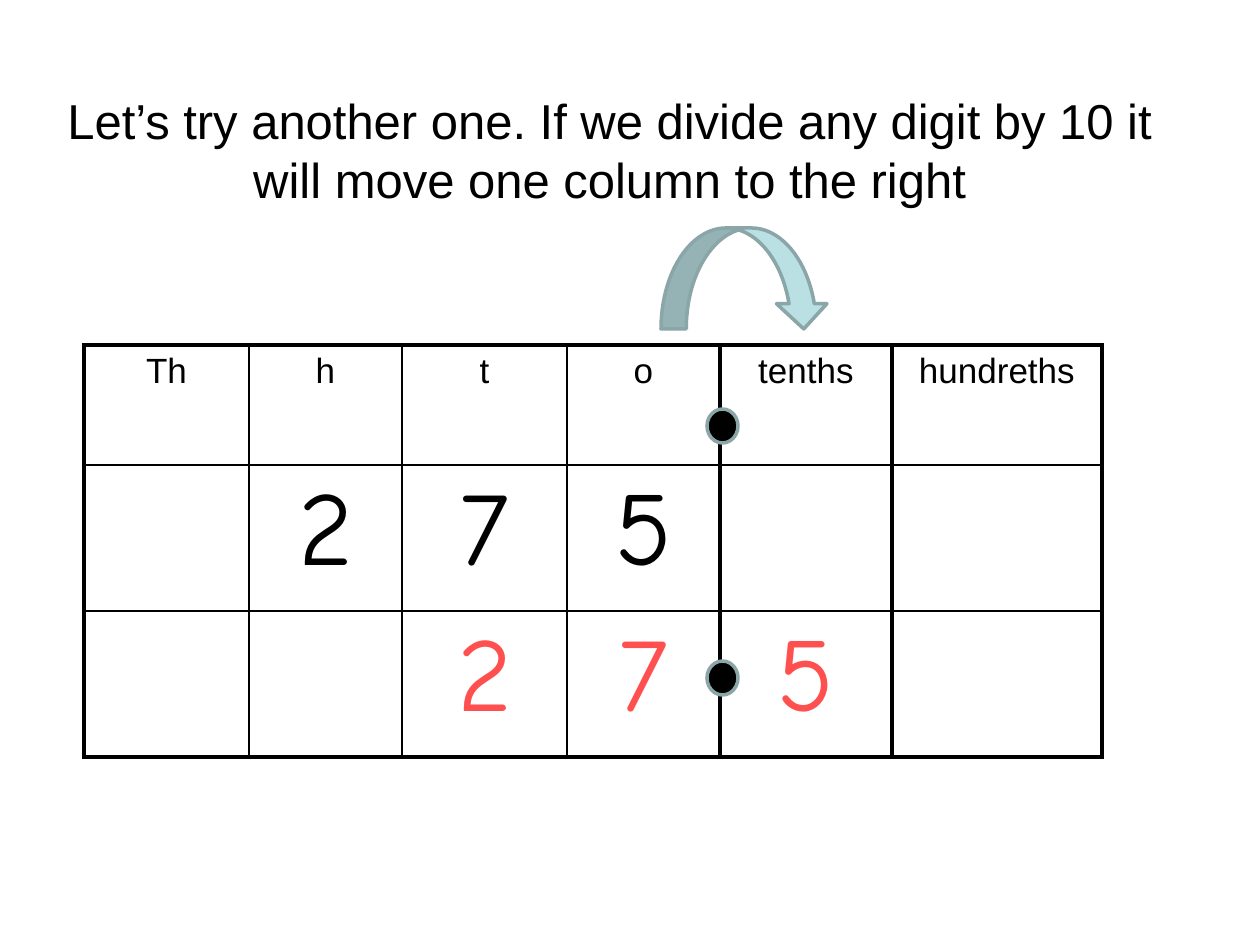
"""Build a place value slide showing division by ten."""
import lxml.etree
import pptx
import pptx.dml.color
import pptx.enum.shapes
import pptx.enum.text
import pptx.oxml.ns
import pptx.util

RGBColor = pptx.dml.color.RGBColor
MSO_SHAPE = pptx.enum.shapes.MSO_SHAPE
CENTER = pptx.enum.text.PP_ALIGN.CENTER

BLACK = RGBColor(0x00, 0x00, 0x00)
RED = RGBColor(0xFF, 0x50, 0x50)
TEAL = RGBColor(0xBB, 0xE0, 0xE3)
GREY_TEAL = RGBColor(0x8A, 0xA6, 0xA8)

TITLE = "Let’s try another one. If we divide any digit by 10 it will move one column to the right"
TITLE_BOX = (53, 84, 1113, 131)
ROWS = [
    (["Th", "h", "t", "o", "tenths", "hundreths"], 120, "Arial", 20, BLACK),
    (["", "2", "7", "5", "", ""], 146, "Comic Neue", 60, BLACK),
    (["", "", "2", "7", "5", ""], 146, "Comic Neue", 60, RED),
]
COLUMN_WIDTHS = [165, 153, 165, 153, 172, 210]
TABLE_LEFT, TABLE_TOP = 84, 345
THICK_COLUMN_EDGES = {0, 4, 5, 6}
THICK_ROW_EDGES = {0, len(ROWS)}
THICK, THIN = 2.25, 1
SHAPES = [
    (MSO_SHAPE.OVAL, (707, 409, 31, 34), BLACK),
    (MSO_SHAPE.CURVED_DOWN_ARROW, (661, 228, 168, 101), TEAL),
    (MSO_SHAPE.OVAL, (707, 661, 31, 34), BLACK),
]


def px(length):
    return pptx.util.Emu(round(length * 914400 / 126))


def write(text_frame, text, font_name, size, color, space_before):
    text_frame.text = text
    paragraph = text_frame.paragraphs[0]
    paragraph.alignment = CENTER
    paragraph.space_before = pptx.util.Pt(space_before)
    for run in paragraph.runs:
        run.font.name = font_name
        run.font.size = pptx.util.Pt(size)
        run.font.color.rgb = color


def add_borders(cell, row, column):
    properties = cell._tc.get_or_add_tcPr()
    edges = [
        ("a:lnL", column in THICK_COLUMN_EDGES),
        ("a:lnR", column + 1 in THICK_COLUMN_EDGES),
        ("a:lnT", row in THICK_ROW_EDGES),
        ("a:lnB", row + 1 in THICK_ROW_EDGES),
    ]
    for position, (tag, is_thick) in enumerate(edges):
        line = lxml.etree.Element(pptx.oxml.ns.qn(tag))
        line.set("w", str(pptx.util.Pt(THICK if is_thick else THIN)))
        fill = lxml.etree.SubElement(line, pptx.oxml.ns.qn("a:solidFill"))
        lxml.etree.SubElement(fill, pptx.oxml.ns.qn("a:srgbClr")).set("val", str(BLACK))
        properties.insert(position, line)


def add_place_value_table(slide):
    height = sum(row[1] for row in ROWS)
    box = (TABLE_LEFT, TABLE_TOP, sum(COLUMN_WIDTHS), height)
    table = slide.shapes.add_table(len(ROWS), len(COLUMN_WIDTHS), *map(px, box)).table
    table.first_row = table.horz_banding = False
    for column, width in zip(table.columns, COLUMN_WIDTHS):
        column.width = px(width)
    for row, (texts, row_height, font_name, size, color) in enumerate(ROWS):
        table.rows[row].height = px(row_height)
        for column, text in enumerate(texts):
            cell = table.cell(row, column)
            cell.fill.background()
            write(cell.text_frame, text, font_name, size, color, 1)
            add_borders(cell, row, column)


def add_title(slide):
    text_frame = slide.shapes.add_textbox(*map(px, TITLE_BOX)).text_frame
    text_frame.word_wrap = True
    write(text_frame, TITLE, "Arial", 28, BLACK, 3)


def add_outlined_shape(slide, kind, box, color):
    shape = slide.shapes.add_shape(kind, *map(px, box))
    shape.shadow.inherit = False
    shape.fill.solid()
    shape.fill.fore_color.rgb = color
    shape.line.color.rgb = GREY_TEAL
    shape.line.width = pptx.util.Pt(2)


def main():
    presentation = pptx.Presentation()
    presentation.slide_width, presentation.slide_height = px(1260), px(945)
    slide = presentation.slides.add_slide(presentation.slide_layouts[6])
    add_place_value_table(slide)
    add_title(slide)
    for kind, box, color in SHAPES:
        add_outlined_shape(slide, kind, box, color)
    presentation.save("out.pptx")


if __name__ == "__main__":
    main()
